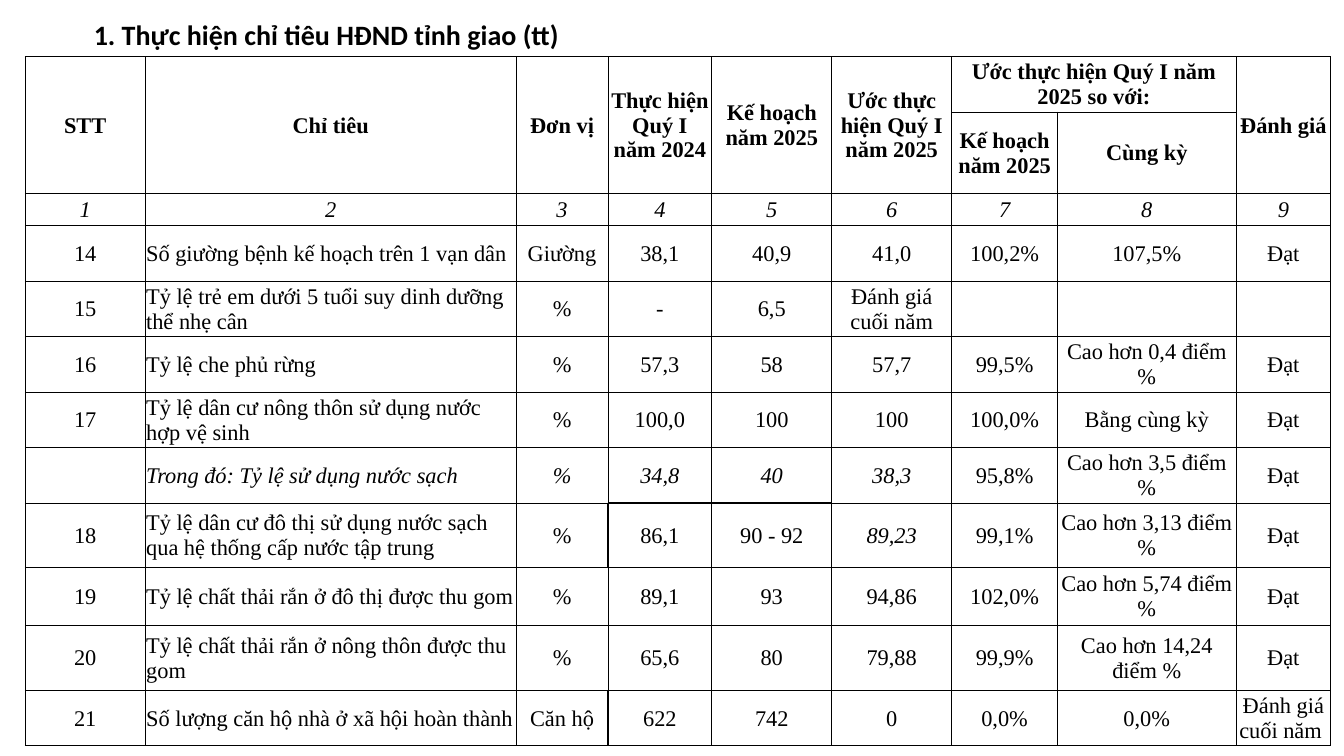
from lxml.etree import SubElement
from pptx import Presentation
from pptx.dml.color import RGBColor
from pptx.enum.text import MSO_ANCHOR as Anchor, MSO_AUTO_SIZE as AutoSize, PP_ALIGN as Align
from pptx.oxml.ns import qn
from pptx.util import Inches, Pt

BLACK = RGBColor(0x00, 0x00, 0x00)
COLUMN_WIDTHS = [1.19, 3.68, 0.91, 1.03, 1.19, 1.19, 1.05, 1.77, 0.94]
ROW_HEIGHTS = [0.55, 0.55, 0.32, 0.55, 0.55, 0.55, 0.55, 0.55, 0.64, 0.57, 0.65, 0.55]
HEADER_ROWS = 2
NUMBER_ROW = 2
INDICATOR_COLUMN = 1
ITALIC_CELLS = {(7, column) for column in range(1, 6)} | {(8, 5)}
HEAVY_CELLS = {(row, column) for row in (8, 11) for column in (3, 4)}
EDGES = {"a:lnL": (0, -1), "a:lnR": (0, 1), "a:lnT": (-1, 0), "a:lnB": (1, 0)}

INDICATORS = [
    ["STT", "Chỉ tiêu", "Đơn vị", "Thực hiện Quý I năm 2024", "Kế hoạch năm 2025",
     "Ước thực hiện Quý I năm 2025", "Ước thực hiện Quý I năm 2025 so với:", "", "Đánh giá"],
    ["", "", "", "", "", "", "Kế hoạch năm 2025", "Cùng kỳ", ""],
    [str(number) for number in range(1, 10)],
    ["14", "Số giường bệnh kế hoạch trên 1 vạn dân", "Giường", "38,1", "40,9", "41,0",
     "100,2%", "107,5%", "Đạt"],
    ["15", "Tỷ lệ trẻ em dưới 5 tuổi suy dinh dưỡng thể nhẹ cân", "%", "-", "6,5",
     "Đánh giá cuối năm", "", "", ""],
    ["16", "Tỷ lệ che phủ rừng", "%", "57,3", "58", "57,7",
     "99,5%", "Cao hơn 0,4 điểm %", "Đạt"],
    ["17", "Tỷ lệ dân cư nông thôn sử dụng nước hợp vệ sinh", "%", "100,0", "100", "100",
     "100,0%", "Bằng cùng kỳ", "Đạt"],
    ["", "Trong đó: Tỷ lệ sử dụng nước sạch", "%", "34,8", "40", "38,3",
     "95,8%", "Cao hơn 3,5 điểm %", "Đạt"],
    ["18", "Tỷ lệ dân cư đô thị sử dụng nước sạch qua hệ thống cấp nước tập trung", "%",
     "86,1", "90 - 92", "89,23", "99,1%", "Cao hơn 3,13 điểm %", "Đạt"],
    ["19", "Tỷ lệ chất thải rắn ở đô thị được thu gom", "%", "89,1", "93", "94,86",
     "102,0%", "Cao hơn 5,74 điểm %", "Đạt"],
    ["20", "Tỷ lệ chất thải rắn ở nông thôn được thu gom", "%", "65,6", "80", "79,88",
     "99,9%", "Cao hơn 14,24 điểm %", "Đạt"],
    ["21", "Số lượng căn hộ nhà ở xã hội hoàn thành", "Căn hộ", "622", "742", "0",
     "0,0%", "0,0%", "Đánh giá cuối năm "],
]


def add_run(paragraph, text, font_name, size, bold, italic=False):
    run = paragraph.add_run()
    run.text = text
    run.font.name = font_name
    run.font.size = Pt(size)
    run.font.bold = bold
    run.font.italic = italic
    run.font.color.rgb = BLACK


def place_heading(slide, left, top, width, height):
    heading = slide.shapes.title
    heading.left, heading.top = Inches(left), Inches(top)
    heading.width, heading.height = Inches(width), Inches(height)
    frame = heading.text_frame
    frame.word_wrap = True
    frame.auto_size = AutoSize.SHAPE_TO_FIT_TEXT
    frame.vertical_anchor = Anchor.TOP
    paragraph = frame.paragraphs[0]
    paragraph.alignment = Align.LEFT
    paragraph.line_spacing = 1.0
    paragraph.space_before = Pt(0)
    add_run(paragraph, "1. Thực hiện chỉ tiêu HĐND tỉnh giao (tt)", "Calibri", 20, True)


def draw_borders(cell, row, column):
    properties = cell._tc.get_or_add_tcPr()
    for edge, (down, across) in EDGES.items():
        heavy = HEAVY_CELLS & {(row, column), (row + down, column + across)}
        border = SubElement(properties, qn(edge), w=str(Pt(1 if heavy else 0.5)))
        fill = SubElement(border, qn("a:solidFill"))
        SubElement(fill, qn("a:srgbClr"), val=str(BLACK))


def fill_cell(cell, row, column, text):
    cell.margin_left = cell.margin_right = cell.margin_top = Inches(0.01)
    cell.margin_bottom = 0
    cell.vertical_anchor = Anchor.MIDDLE
    draw_borders(cell, row, column)
    cell.fill.background()
    if text:
        paragraph = cell.text_frame.paragraphs[0]
        is_indicator = column == INDICATOR_COLUMN and row > NUMBER_ROW
        paragraph.alignment = Align.LEFT if is_indicator else Align.CENTER
        italic = row == NUMBER_ROW or (row, column) in ITALIC_CELLS
        add_run(paragraph, text, "Times New Roman", 16, row < HEADER_ROWS, italic)


def place_indicators(slide, left, top, width, height):
    table = slide.shapes.add_table(
        len(ROW_HEIGHTS), len(COLUMN_WIDTHS),
        Inches(left), Inches(top), Inches(width), Inches(height)).table
    table.first_row = False
    table.horz_banding = False
    for column, column_width in zip(table.columns, COLUMN_WIDTHS):
        column.width = Inches(column_width)
    for row, row_height in zip(table.rows, ROW_HEIGHTS):
        row.height = Inches(row_height)
    for row, texts in enumerate(INDICATORS):
        for column, text in enumerate(texts):
            fill_cell(table.cell(row, column), row, column, text)
    for column in (0, 1, 2, 3, 4, 5, 8):
        table.cell(0, column).merge(table.cell(1, column))
    table.cell(0, 6).merge(table.cell(0, 7))


def main():
    presentation = Presentation()
    presentation.slide_width = Inches(13.33)
    presentation.slide_height = Inches(7.5)
    slide = presentation.slides.add_slide(presentation.slide_layouts[5])
    place_heading(slide, 0.83, 0.12, 8.18, 0.44)
    place_indicators(slide, 0.25, 0.56, sum(COLUMN_WIDTHS), sum(ROW_HEIGHTS))
    presentation.save("out.pptx")


if __name__ == "__main__":
    main()
